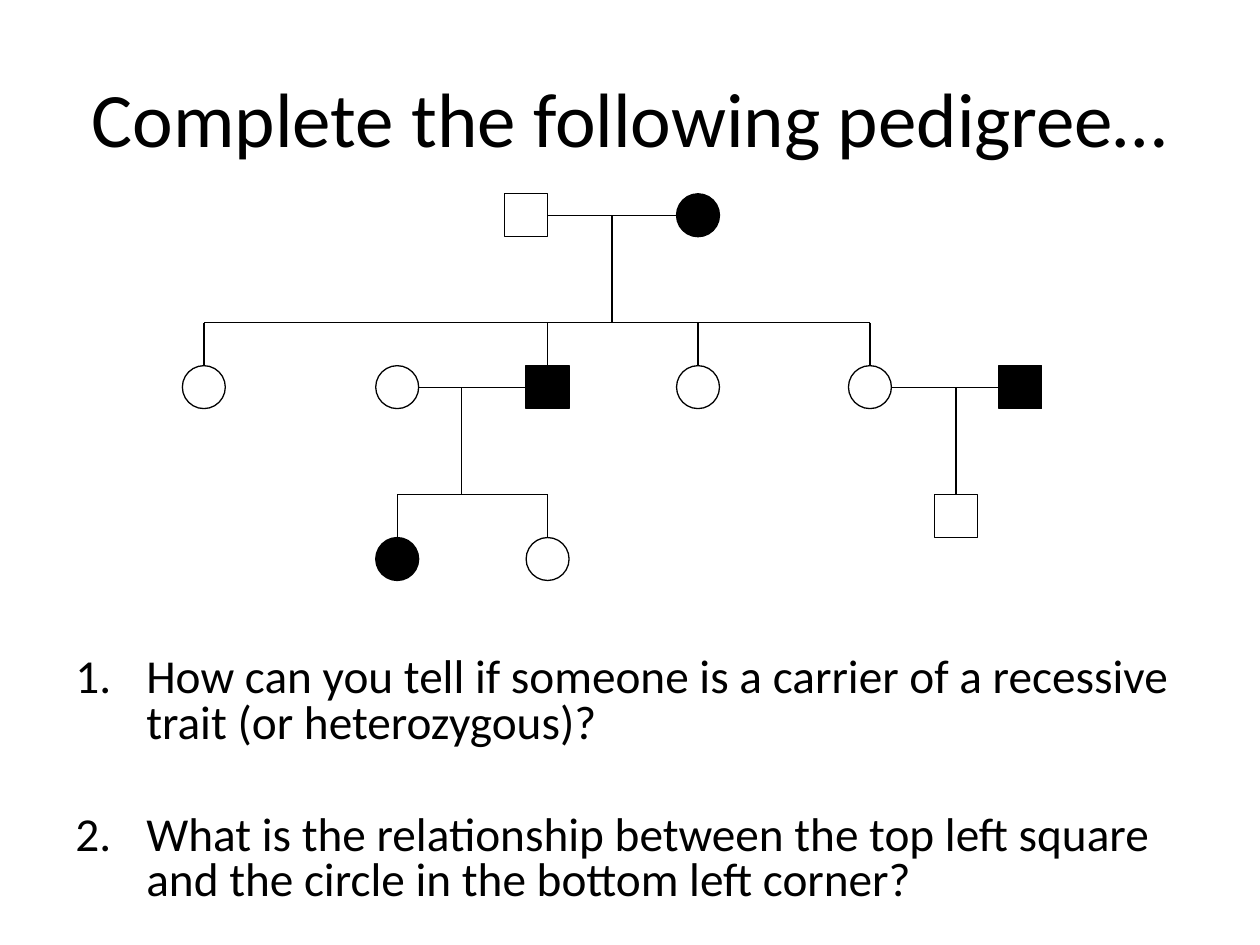
from dataclasses import dataclass
from typing import Optional

from lxml import etree
from pptx import Presentation
from pptx.dml.color import RGBColor
from pptx.enum.shapes import MSO_CONNECTOR, MSO_SHAPE
from pptx.enum.text import MSO_ANCHOR, PP_ALIGN
from pptx.oxml.ns import qn
from pptx.util import Cm, Pt

SQUARE, CIRCLE = MSO_SHAPE.RECTANGLE, MSO_SHAPE.OVAL
STRAIGHT = MSO_CONNECTOR.STRAIGHT
CENTER, LEFT = PP_ALIGN.CENTER, PP_ALIGN.LEFT
MIDDLE, TOP = MSO_ANCHOR.MIDDLE, MSO_ANCHOR.TOP
TOP_SITE, LEFT_SITE, RIGHT_SITE = 0, 1, 3


@dataclass(frozen=True)
class Theme:
    ink: RGBColor = RGBColor(0, 0, 0)
    paper: RGBColor = RGBColor(255, 255, 255)
    font: str = "Calibri"
    title: Pt = Pt(44)
    body: Pt = Pt(27)
    line: Pt = Pt(0.75)


@dataclass(frozen=True)
class Person:
    name: str
    col: int
    row: int
    form: int
    filled: bool = False


@dataclass(frozen=True)
class Link:
    start: tuple[int, int]
    end: tuple[int, int]
    mate: Optional[str] = None  # square joined at the end
    site: int = TOP_SITE


THEME = Theme()

# Grid: one step is half a symbol; centres sit on whole steps
STEP = Cm(16.46) / 38
LEFT_X, TOP_Y = Cm(4.11), Cm(4.34)

PEOPLE = [
    Person("father", 16 - 1, 0, SQUARE),
    Person("mother", 23, 0, CIRCLE, True),
    Person("eldest", 0, 8, CIRCLE),
    Person("wife", 9, 8, CIRCLE),
    Person("son", 16, 8, SQUARE, True),
    Person("second", 23, 8, CIRCLE),
    Person("third", 31, 8, CIRCLE),
    Person("husband", 38, 8, SQUARE, True),
    Person("grandson", 35, 14, SQUARE),
    Person("girl", 9, 16, CIRCLE, True),
    Person("sister", 16, 16, CIRCLE),
]

LINKS = [
    # Couples
    Link((22, 0), (16, 0), "father", RIGHT_SITE),
    Link((10, 8), (15, 8), "son", LEFT_SITE),
    Link((32, 8), (37, 8), "husband", LEFT_SITE),
    # Descent
    Link((19, 0), (19, 5)),
    Link((12, 8), (12, 13)),
    Link((35, 8), (35, 13), "grandson"),
    # Sibling bars
    Link((0, 5), (31, 5)),
    Link((9, 13), (16, 13)),
    # Drops to children
    Link((16, 5), (16, 7), "son"),
    *[Link((col, 5), (col, 7)) for col in (0, 23, 31)],
    *[Link((col, 13), (col, 15)) for col in (9, 16)],
]

TITLE = "Complete the following pedigree…"
ASKS = [
    "How can you tell if someone is a carrier of a recessive trait (or heterozygous)?",
    "What is the relationship between the top left square and the circle in the bottom left corner?",
]


def spot(col: float, row: float) -> tuple[int, int]:
    return round(LEFT_X + col * STEP), round(TOP_Y + row * STEP)


def add_person(slide, person: Person):
    x, y = spot(person.col - 1, person.row - 1)
    side = round(2 * STEP)
    shape = slide.shapes.add_shape(person.form, x, y, side, side)
    shape.shadow.inherit = False
    shape.fill.solid()
    shape.fill.fore_color.rgb = THEME.ink if person.filled else THEME.paper
    shape.line.color.rgb = THEME.ink
    shape.line.width = THEME.line
    return shape


def add_link(slide, link: Link, shapes: dict) -> None:
    line = slide.shapes.add_connector(STRAIGHT, *spot(*link.start), *spot(*link.end))
    line.line.color.rgb = THEME.ink
    line.line.width = THEME.line
    etree.SubElement(line._element.spPr, qn("a:effectLst"))
    if link.mate:
        line.end_connect(shapes[link.mate], link.site)


def add_text(slide, box: tuple, texts: list[str], size: Pt, align: int, anchor: int) -> list:
    frame = slide.shapes.add_textbox(*box).text_frame
    frame.word_wrap = True
    frame.vertical_anchor = anchor
    frame.text = "\n".join(texts)
    for para in frame.paragraphs:
        para.alignment = align
        para.font.name = THEME.font
        para.font.size = size
        para.font.color.rgb = THEME.ink
    return list(frame.paragraphs)


def number(para) -> None:
    props = para._p.get_or_add_pPr()
    props.set("marL", str(Cm(1.43)))
    props.set("indent", str(-Cm(1.43)))
    mark = etree.Element(qn("a:buAutoNum"), type="arabicPeriod")
    props.find(qn("a:defRPr")).addprevious(mark)


def main() -> None:
    deck = Presentation()
    deck.slide_width, deck.slide_height = Cm(25.4), Cm(19.05)
    slide = deck.slides.add_slide(deck.slide_layouts[6])

    # Title
    add_text(slide, (Cm(1.27), Cm(0.76), Cm(22.86), Cm(3.18)),
             [TITLE], THEME.title, CENTER, MIDDLE)

    # Questions
    asks = add_text(slide, (Cm(1.27), Cm(13.13), Cm(22.86), Cm(5.28)),
                    ASKS, THEME.body, LEFT, TOP)
    for para in asks:
        para.line_spacing = 0.8
        number(para)
    asks[1].space_before = Pt(38)

    # Pedigree
    shapes = {person.name: add_person(slide, person) for person in PEOPLE}
    for link in LINKS:
        add_link(slide, link, shapes)

    deck.save("out.pptx")


if __name__ == "__main__":
    main()
